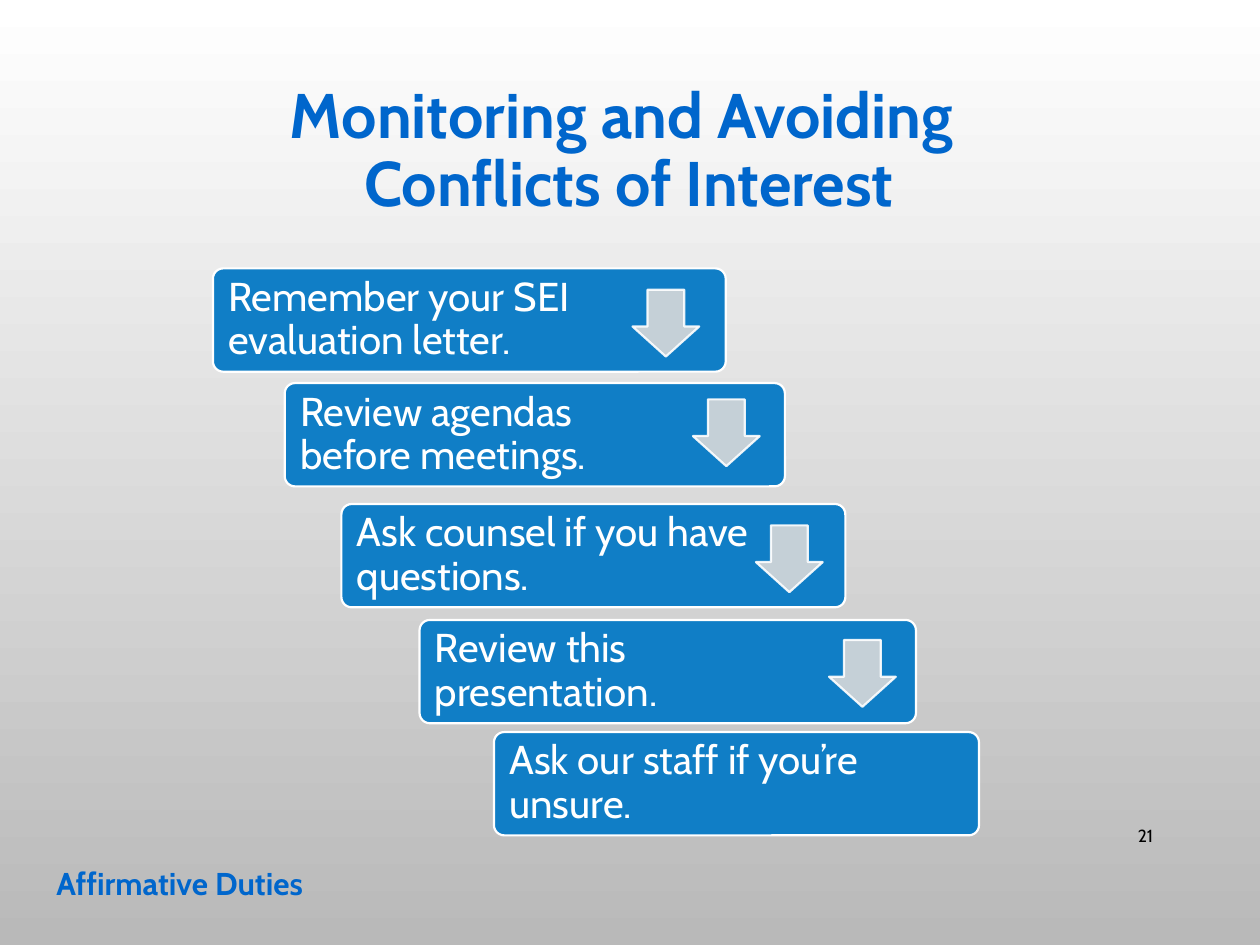
"""Build the slide on monitoring and avoiding conflicts of interest."""
import pptx
import pptx.dml.color
import pptx.enum.shapes
import pptx.enum.text
import pptx.util
from lxml import etree

Inches, Pt = pptx.util.Inches, pptx.util.Pt
RGBColor = pptx.dml.color.RGBColor
SHAPE = pptx.enum.shapes.MSO_SHAPE
ALIGN = pptx.enum.text.PP_ALIGN
ANCHOR = pptx.enum.text.MSO_ANCHOR

TITLE_BLUE = RGBColor(0x00, 0x66, 0xCC)
STEP_BLUE = RGBColor(0x10, 0x7E, 0xC6)
ARROW_GREY = RGBColor(0xD9, 0xD9, 0xD9)
BACK_GREY = RGBColor(0xB9, 0xB9, 0xB9)
WHITE = RGBColor(0xFF, 0xFF, 0xFF)
BLACK = RGBColor(0x00, 0x00, 0x00)

TITLE = "Monitoring and Avoiding \vConflicts of Interest"
SECTION = "Affirmative Duties"
PAGE = "21"
STEPS = [
    ("Remember your SEI evaluation letter.", (1.69, 2.13, 4.07), (5.02, 2.3)),
    ("Review agendas\vbefore meetings.", (2.26, 3.04, 3.97), (5.5, 3.17)),
    ("Ask counsel if you have questions.", (2.71, 4, 4), (6, 4.17)),
    ("Review this presentation.", (3.33, 4.92, 3.94), (6.58, 5.08)),
    ("Ask our staff if you’re unsure.", (3.92, 5.81, 3.85), None),
]
STEP_HEIGHT = 0.82
ARROW_SIZE = 0.53
STEP_MARGINS = dict(margin_left=0.1, margin_top=0.1, margin_right=0.7, margin_bottom=0.1)


def set_attrs(obj, values):
    for name, value in values.items():
        setattr(obj, name, value)


def write(s, text, size, color, bold=False, align=ALIGN.LEFT, spacing=1.0, anchor=ANCHOR.MIDDLE):
    tf = s.text_frame
    tf.text = text
    set_attrs(tf, dict(word_wrap=True, vertical_anchor=anchor))
    p = tf.paragraphs[0]
    set_attrs(p, dict(alignment=align, line_spacing=spacing))
    for r in p.runs:
        set_attrs(r.font, dict(name="Cabin", size=Pt(size), bold=bold))
        r.font.color.rgb = color


def add_block(slide, kind, box, adjustments, color):
    sp = slide.shapes.add_shape(kind, *map(Inches, box))
    for i, value in enumerate(adjustments):
        sp.adjustments[i] = value
    sp.shadow.inherit = False
    sp.fill.solid()
    sp.fill.fore_color.rgb = color
    sp.line.color.rgb = WHITE
    sp.line.width = Pt(1.25)
    return sp


def set_opacity(sp, percent):
    for clr in sp.element.spPr.iter(pptx.oxml.ns.qn("a:srgbClr")):
        etree.SubElement(clr, pptx.oxml.ns.qn("a:alpha"), val=str(percent * 1000))


def add_label(slide, box, text, size, color, **style):
    s = slide.shapes.add_textbox(*map(Inches, box))
    write(s, text, size, color, **style)


def main():
    prs = pptx.Presentation()
    set_attrs(prs, dict(slide_width=Inches(10), slide_height=Inches(7.5)))
    slide = prs.slides.add_slide(prs.slide_layouts[5])

    fill = slide.background.fill
    fill.gradient()
    fill.gradient_angle = 270
    for stop, position, color in zip(fill.gradient_stops, (0, 1), (WHITE, BACK_GREY)):
        stop.position = position
        stop.color.rgb = color

    title = slide.shapes.title
    set_attrs(title, dict(left=Inches(0.74), top=Inches(0.58), width=Inches(8.5), height=Inches(1.26)))
    write(title, TITLE, 36, TITLE_BLUE, bold=True, align=ALIGN.CENTER, spacing=0.9)
    add_label(slide, (8.62, 6.43, 0.63, 0.4), PAGE, 10, BLACK, align=ALIGN.RIGHT)

    for text, (left, top, width), _ in STEPS:
        sp = add_block(slide, SHAPE.ROUNDED_RECTANGLE, (left, top, width, STEP_HEIGHT), [0.1], STEP_BLUE)
        set_attrs(sp.text_frame, {k: Inches(v) for k, v in STEP_MARGINS.items()})
        write(sp, text, 23, WHITE, spacing=0.9)

    for _, _, corner in STEPS:
        if corner:
            sp = add_block(slide, SHAPE.DOWN_ARROW, (*corner, ARROW_SIZE, ARROW_SIZE), [0.55, 0.45], ARROW_GREY)
            set_opacity(sp, 90)

    add_label(slide, (0.35, 6.81, 2.24, 0.4), SECTION, 18, TITLE_BLUE, bold=True, anchor=ANCHOR.TOP)
    prs.save("out.pptx")


if __name__ == "__main__":
    main()
